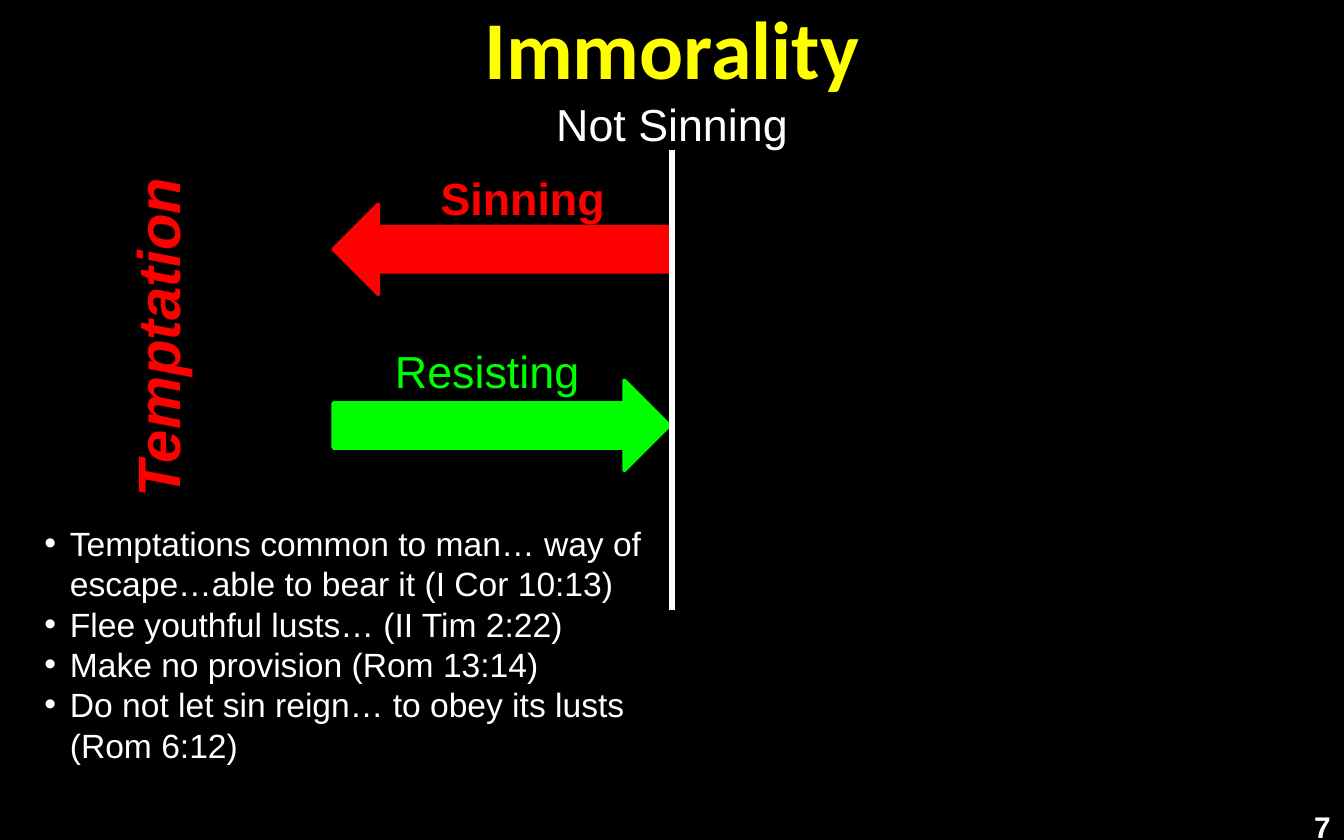
from lxml import etree
from pptx import Presentation
from pptx import util as u
from pptx.dml import color
from pptx.enum import shapes, text
from pptx.oxml import ns

EMU_PER_PX = 9144
COLORS = {"black": "000000", "white": "FFFFFF", "yellow": "FFFF00",
          "red": "FF0000", "green": "00FF00"}
VERSES = [
    "Temptations common to man… way of escape…able to bear it (I Cor 10:13)",
    "Flee youthful lusts… (II Tim 2:22)",
    "Make no provision (Rom 13:14)",
    "Do not let sin reign… to obey its lusts (Rom 6:12)",
]


def px(length):
    """Turn whole pixels, 100 to the inch, into EMU."""
    return u.Emu(length * EMU_PER_PX)


def rgb(name):
    """Look up a named colour."""
    return color.RGBColor.from_string(COLORS[name])


class SlideBuilder:
    """Hold the style and the current page, and add each kind of element."""

    def __init__(self, page, font="Arial"):
        """Start on a page with a black background."""
        self.page = page
        self.font = font
        page.background.fill.solid()
        page.background.fill.fore_color.rgb = rgb("black")

    def place(self, box, left, top, width, height):
        """Move and size a box."""
        box.left, box.top = px(left), px(top)
        box.width, box.height = px(width), px(height)

    def style(self, para, size, shade, bold=False, italic=False, font=None):
        """Format every run of a paragraph."""
        for span in para.runs:
            span.font.name = font or self.font
            span.font.size = u.Pt(size)
            span.font.bold = bold
            span.font.italic = italic
            span.font.color.rgb = rgb(shade)

    def title(self, words, area):
        """Fill the title placeholder."""
        box = self.page.shapes.title
        self.place(box, *area)
        frame = box.text_frame
        frame.text = words
        frame.auto_size = text.MSO_AUTO_SIZE.NONE
        frame.vertical_anchor = text.MSO_ANCHOR.MIDDLE
        para = frame.paragraphs[0]
        para.alignment = text.PP_ALIGN.CENTER
        self.style(para, 44, "yellow", bold=True, font="Calibri")

    def bullets(self, lines, area, indent=19):
        """Fill the body placeholder with a bulleted list."""
        box = self.page.placeholders[1]
        self.place(box, *area)
        frame = box.text_frame
        frame.text = "\n".join(lines)
        frame.auto_size = text.MSO_AUTO_SIZE.NONE
        for para in frame.paragraphs:
            props = para._p.get_or_add_pPr()
            props.set("marL", str(px(indent)))
            props.set("indent", str(-px(indent)))
            etree.SubElement(props, ns.qn("a:buChar")).set("char", "•")
            para.space_before = u.Pt(0)
            self.style(para, 18, "white")

    def label(self, words, area, size, shade, align=text.PP_ALIGN.LEFT,
              wrap=False, rotation=0, **look):
        """Add a one-line text box."""
        box = self.page.shapes.add_textbox(*map(px, area))
        box.rotation = rotation
        frame = box.text_frame
        frame.text = words
        frame.word_wrap = wrap
        para = frame.paragraphs[0]
        para.alignment = align
        self.style(para, size, shade, **look)

    def arrow(self, area, shade, rotation=0):
        """Add a block arrow that points left before rotation."""
        box = self.page.shapes.add_shape(
            shapes.MSO_SHAPE.LEFT_ARROW, *map(px, area))
        box.rotation = rotation
        box.shadow.inherit = False
        box.fill.solid()
        box.fill.fore_color.rgb = rgb(shade)
        box.line.color.rgb = rgb(shade)
        box.line.width = u.Pt(2)

    def line(self, start, end, shade, width):
        """Add a straight line."""
        rule = self.page.shapes.add_connector(
            shapes.MSO_CONNECTOR.STRAIGHT, *map(px, start + end))
        rule.line.color.rgb = rgb(shade)
        rule.line.width = u.Pt(width)
        etree.SubElement(rule._element.spPr, ns.qn("a:effectLst"))


def main():
    """Build and save the deck."""
    deck = Presentation()
    deck.slide_width, deck.slide_height = px(1000), px(625)
    builder = SlideBuilder(deck.slides.add_slide(deck.slide_layouts[1]))

    builder.title("Immorality", (75, 7, 850, 56))
    builder.label("7", (950, 597, 50, 28), 16, "white",
                  align=text.PP_ALIGN.RIGHT, wrap=True, bold=True)
    builder.label("Sinning", (318, 122, 143, 50), 24, "red", bold=True)
    builder.arrow((248, 152, 250, 67), "red")
    builder.arrow((248, 283, 250, 67), "green", rotation=180)
    builder.label("Resisting", (284, 251, 159, 50), 24, "green")
    builder.line((500, 112), (500, 454), "white", 3)
    builder.label("Not Sinning", (403, 67, 194, 50), 24, "white",
                  align=text.PP_ALIGN.CENTER)
    builder.label("Temptation", (-12, 219, 258, 64), 32, "red",
                  rotation=270, bold=True, italic=True)
    builder.bullets(VERSES, (23, 384, 468, 192))

    deck.save("out.pptx")


if __name__ == "__main__":
    main()
